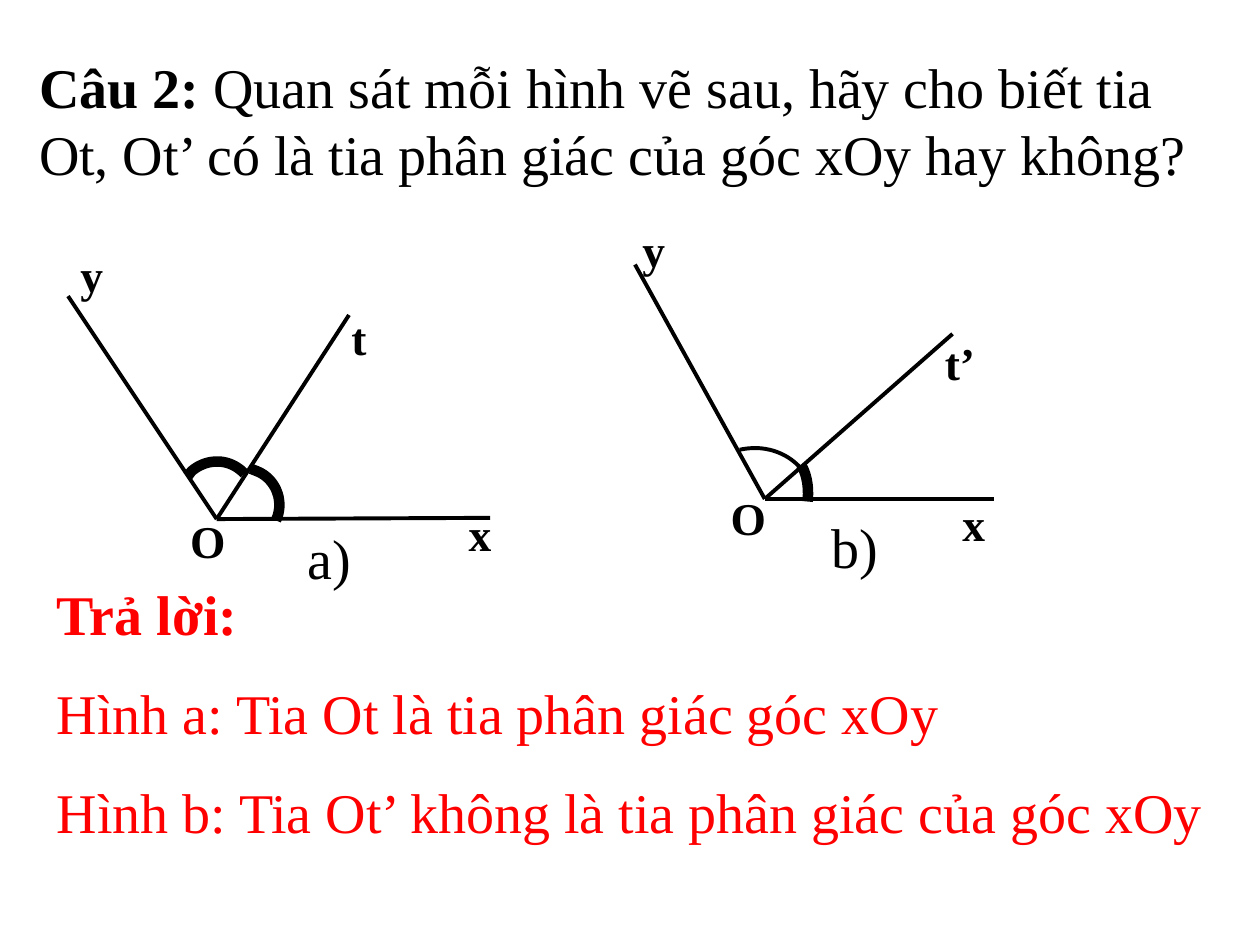
from dataclasses import dataclass

from lxml.etree import SubElement
from pptx import Presentation
from pptx.dml.color import RGBColor
from pptx.enum.shapes import MSO_CONNECTOR
from pptx.enum.text import MSO_ANCHOR, PP_ALIGN
from pptx.oxml.ns import qn
from pptx.util import Inches, Pt


@dataclass(frozen=True)
class Theme:
    """Fonts, colours and sizes of the slide."""
    font: str = "Times New Roman"
    ink: RGBColor = RGBColor(0, 0, 0)
    answer: RGBColor = RGBColor(255, 0, 0)
    text_size: float = 32
    label_size: float = 26
    thin: float = 2.25
    thick: float = 6


THEME = Theme()

FIGURES = [
    {
        "origin": (1.72, 4.12),
        "ray_ends": [(3.89, 4.11), (0.54, 2.35), (2.77, 2.5)],
        "labels": [
            ("x", 3.62, 3.97, 0.62, 0.59),
            ("t", 2.69, 2.41, 0.75, 0.54),
            ("y", 0.54, 1.91, 0.5, 0.59),
            ("O", 1.41, 4.02, 0.61, 0.68),
        ],
        "arcs": [
            ([(1.99, 3.72), (2.04, 3.74), (2.19, 3.8), (2.26, 3.98), (2.19, 4.13)], THEME.thick),
            ([(1.49, 3.78), (1.52, 3.74), (1.65, 3.63), (1.83, 3.64), (1.94, 3.76)], THEME.thick),
        ],
        "caption": ("a)", 2.34, 4.11, 0.71, 0.63),
    },
    {
        "origin": (6.07, 3.96),
        "ray_ends": [(7.89, 3.96), (7.56, 2.65), (5.04, 2.1)],
        "labels": [
            ("x", 7.54, 3.89, 0.45, 0.51),
            ("t’", 7.4, 2.61, 0.57, 0.51),
            ("y", 5, 1.71, 0.42, 0.79),
            ("O", 5.7, 3.84, 0.37, 0.51),
        ],
        "arcs": [
            ([(6.36, 3.69), (6.41, 3.78), (6.42, 3.88), (6.41, 3.98)], THEME.thick),
            ([(5.87, 3.57), (6.05, 3.53), (6.23, 3.58), (6.35, 3.71)], THEME.thin),
        ],
        "caption": ("b)", 6.5, 4.02, 0.64, 0.57),
    },
]


def write_run(paragraph, text, size=THEME.text_size, bold=False, color=THEME.ink):
    """Add a formatted run to a paragraph."""
    run = paragraph.add_run()
    run.text = text
    run.font.name = THEME.font
    run.font.size = Pt(size)
    run.font.bold = bold
    run.font.color.rgb = color


def place(shape, left, top, width, height):
    """Set the position and size of a shape in inches."""
    shape.left, shape.top = Inches(left), Inches(top)
    shape.width, shape.height = Inches(width), Inches(height)


def add_label(shapes, text, left, top, width, height, **text_format):
    """Add a text box holding one run."""
    box = shapes.add_textbox(Inches(left), Inches(top), Inches(width), Inches(height))
    box.text_frame.word_wrap = True
    write_run(box.text_frame.paragraphs[0], text, **text_format)


def add_ray(shapes, origin, end):
    """Draw a straight ray from the vertex."""
    ray = shapes.add_connector(MSO_CONNECTOR.STRAIGHT, *map(Inches, origin + end))
    ray.line.color.rgb = THEME.ink
    ray.line.width = Pt(THEME.thin)
    SubElement(ray.element.spPr, qn("a:effectLst"))


def curve_point(controls, step):
    """Return the point of a cubic curve at a step from 0 to 1."""
    rest = 1 - step
    weights = (rest ** 3, 3 * rest ** 2 * step, 3 * rest * step ** 2, step ** 3)
    return tuple(
        Inches(sum(weight * point[axis] for weight, point in zip(weights, controls)))
        for axis in (0, 1)
    )


def add_arc(shapes, points, width, steps=24):
    """Draw an angle mark whose last four points control a cubic curve."""
    builder = shapes.build_freeform(*map(Inches, points[0]))
    curve = [curve_point(points[-4:], index / steps) for index in range(steps + 1)]
    builder.add_line_segments(curve, close=False)
    arc = builder.convert_to_shape()
    arc.shadow.inherit = False
    arc.fill.background()
    arc.line.color.rgb = THEME.ink
    arc.line.width = Pt(width)


def add_figure(slide, figure):
    """Draw one angle with its rays, marks, labels and caption."""
    shapes = slide.shapes.add_group_shape().shapes
    for end in figure["ray_ends"]:
        add_ray(shapes, figure["origin"], end)
    for label in figure["labels"]:
        add_label(shapes, *label, size=THEME.label_size, bold=True)
    for points, width in figure["arcs"]:
        add_arc(shapes, points, width)
    add_label(shapes, *figure["caption"])


def fill_question(title):
    """Write the question in the title placeholder."""
    place(title, 0.21, 0.36, 9.65, 1.18)
    title.text_frame.vertical_anchor = MSO_ANCHOR.MIDDLE
    paragraph = title.text_frame.paragraphs[0]
    paragraph.alignment = PP_ALIGN.LEFT
    write_run(paragraph, "Câu 2: ", bold=True)
    write_run(paragraph, "Quan sát mỗi hình vẽ sau, hãy cho biết tia Ot, Ot’ "
                         "có là tia phân giác của góc xOy hay không?")


def fill_answers(body):
    """Write the answers in the body placeholder without bullets."""
    place(body, 0.35, 4.55, 9.76, 2.26)
    answers = [
        "Trả lời:",
        "Hình a: Tia Ot là tia phân giác góc xOy",
        "Hình b: Tia Ot’ không là tia phân giác của góc xOy",
    ]
    frame = body.text_frame
    for index, answer in enumerate(answers):
        paragraph = frame.add_paragraph() if index else frame.paragraphs[0]
        properties = paragraph._p.get_or_add_pPr()
        properties.set("marL", "0")
        properties.set("indent", "0")
        SubElement(properties, qn("a:buNone"))
        paragraph.space_before = Pt(18 if index else 0)
        write_run(paragraph, answer, bold=index == 0, color=THEME.answer)


def main():
    """Build and save the slide."""
    presentation = Presentation()
    presentation.slide_width, presentation.slide_height = Inches(10), Inches(7.5)
    slide = presentation.slides.add_slide(presentation.slide_layouts[1])
    fill_question(slide.shapes.title)
    for figure in FIGURES:
        add_figure(slide, figure)
    fill_answers(slide.placeholders[1])
    presentation.save("out.pptx")


if __name__ == "__main__":
    main()
